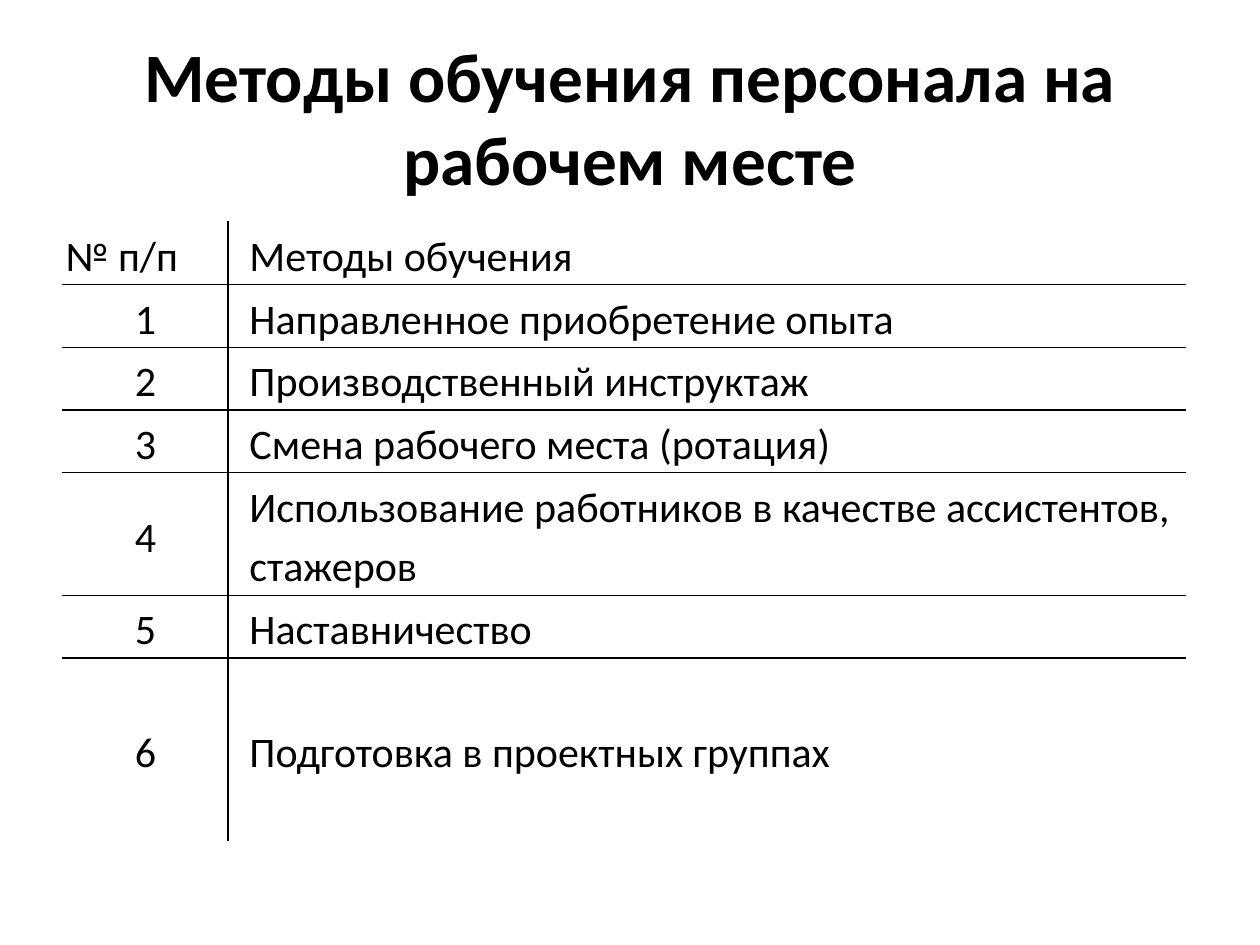
from lxml import etree
from pptx import Presentation
from pptx.dml.color import RGBColor
from pptx.enum.text import MSO_ANCHOR, PP_ALIGN
from pptx.oxml.ns import qn
from pptx.util import Pt

LEFT, CENTER = PP_ALIGN.LEFT, PP_ALIGN.CENTER
MIDDLE = MSO_ANCHOR.MIDDLE
COLORS = {"ink": "000000"}
FONT = "Calibri"
TITLE = "Методы обучения персонала на рабочем месте"
ROWS = [
    ("№ п/п", "Методы обучения"),
    ("1", "Направленное приобретение опыта"),
    ("2", "Производственный инструктаж"),
    ("3", "Смена рабочего места (ротация)"),
    ("4", "Использование работников в качестве ассистентов, стажеров"),
    ("5", "Наставничество"),
    ("6", "Подготовка в проектных группах"),
]
WIDTHS = [94.3, 548, 5.7]
HEIGHTS = [35.8] * 4 + [70.3, 35.8, 104.8]
INDENT = 10.8
MARGINS = {"margin_left": 1.5, "margin_right": 1.5,
           "margin_top": 0.7, "margin_bottom": 0.7}


def assign(item, values):
    for name, value in values.items():
        setattr(item, name, value)


def write(par, text, size, bold=False, align=LEFT):
    par.alignment = align
    run = par.add_run()
    run.text = text
    assign(run.font, {"name": FONT, "size": Pt(size), "bold": bold})
    run.font.color.rgb = RGBColor.from_string(COLORS["ink"])


def add_title(slide, left, top, width, height):
    box = slide.shapes.add_textbox(Pt(left), Pt(top), Pt(width), Pt(height))
    frame = box.text_frame
    assign(frame, {"word_wrap": True, "vertical_anchor": MIDDLE})
    write(frame.paragraphs[0], TITLE, 39.6, True, CENTER)


def add_rules(cell, sides):
    """Draw thin lines on the given sides, in the order L, R, T, B."""
    props = cell._tc.get_or_add_tcPr()
    for side in sides:
        line = etree.SubElement(props, qn(f"a:ln{side}"), w=str(Pt(1)))
        fill = etree.SubElement(line, qn("a:solidFill"))
        etree.SubElement(fill, qn("a:srgbClr"), val=COLORS["ink"])


def fill_cell(cell, text, col, sides):
    add_rules(cell, sides)
    cell.fill.background()
    assign(cell, {name: Pt(value) for name, value in MARGINS.items()})
    cell.vertical_anchor = MIDDLE
    par = cell.text_frame.paragraphs[0]
    assign(par, {"line_spacing": 1.15, "space_after": Pt(10)})
    write(par, text, 24, align=CENTER if text.isdigit() else LEFT)
    if col == 1:
        par._p.get_or_add_pPr().set("marL", str(Pt(INDENT)))


def add_methods(slide, left, top):
    frame = slide.shapes.add_table(len(ROWS), len(WIDTHS), Pt(left), Pt(top),
                                   Pt(sum(WIDTHS)), Pt(sum(HEIGHTS)))
    table = frame.table
    assign(table, {"first_row": False, "horz_banding": False})
    for column, width in zip(table.columns, WIDTHS):
        column.width = Pt(width)
    last = len(ROWS) - 1
    for idx, texts in enumerate(ROWS):
        table.rows[idx].height = Pt(HEIGHTS[idx])
        level = ("T" if idx > 0 else "") + ("B" if idx < last else "")
        for col, text in enumerate(texts):
            fill_cell(table.cell(idx, col), text, col, "RL"[col] + level)
        spare = table.cell(idx, len(texts))
        spare.fill.background()
        assign(spare, dict.fromkeys(MARGINS, 0))


def main():
    deck = Presentation()
    assign(deck, {"slide_width": Pt(720), "slide_height": Pt(540)})
    slide = deck.slides.add_slide(deck.slide_layouts[6])
    add_title(slide, 36, 21.6, 648, 90)
    add_methods(slide, 36, 126.9)
    deck.save("out.pptx")


if __name__ == "__main__":
    main()
